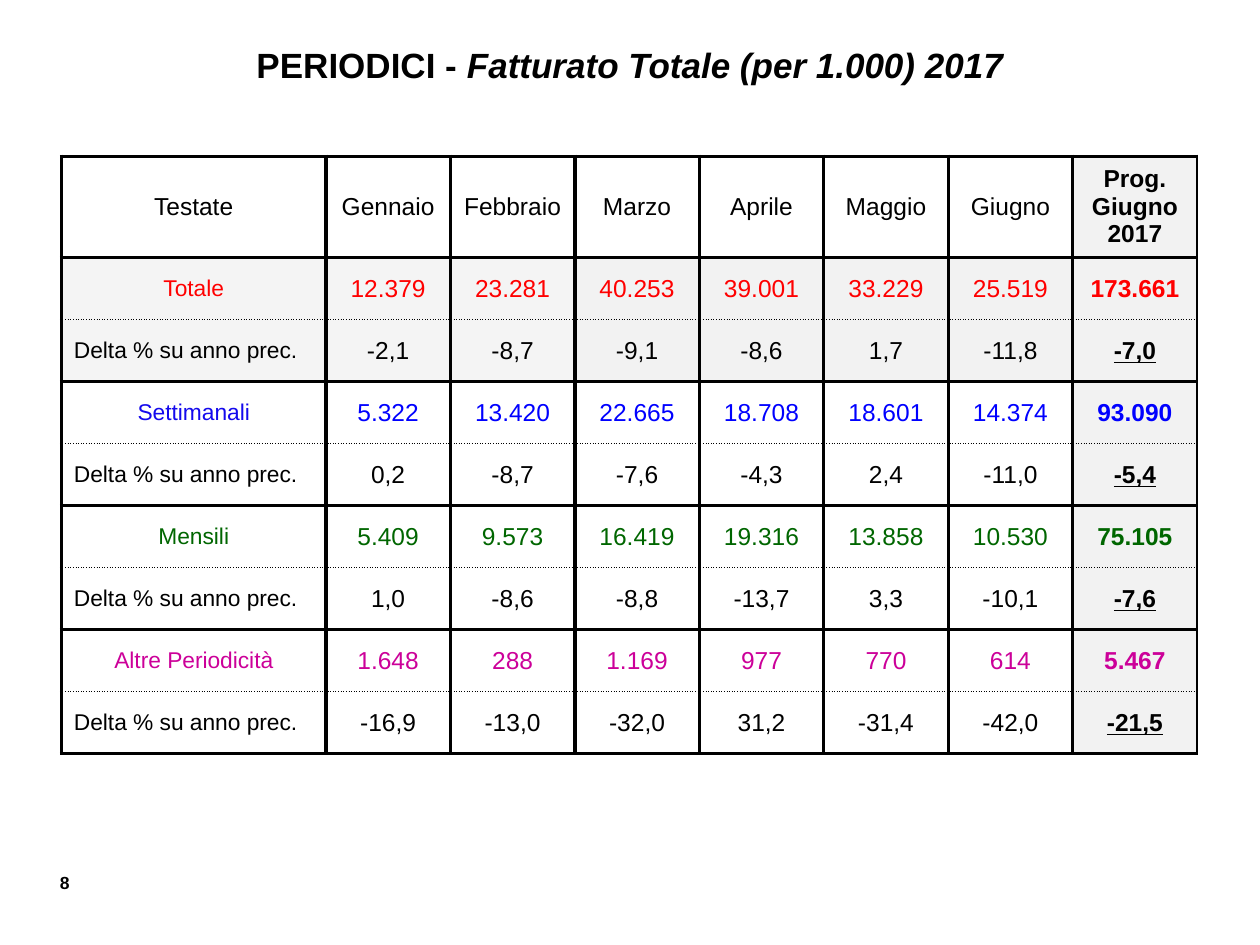
"""Build the slide with the 2017 turnover table of periodicals."""
from dataclasses import dataclass

from lxml.etree import SubElement
from pptx import Presentation
from pptx.dml.color import RGBColor
from pptx.enum.text import MSO_ANCHOR, MSO_AUTO_SIZE, PP_ALIGN
from pptx.oxml.ns import qn
from pptx.util import Cm, Pt

BLACK = RGBColor(0x00, 0x00, 0x00)
GREY = RGBColor(0xF2, 0xF2, 0xF2)
RED = RGBColor(0xFF, 0x00, 0x00)
INDIGO = RGBColor(0x14, 0x09, 0xED)
BLUE = RGBColor(0x00, 0x00, 0xFF)
GREEN = RGBColor(0x00, 0x66, 0x00)
PINK = RGBColor(0xCC, 0x00, 0x99)
FONT = "Arial"
THIN, MID, THICK = 1, 1.5, 2.25
DELTA = "Delta % su anno prec."
HEADS = ["Testate", "Gennaio", "Febbraio", "Marzo", "Aprile", "Maggio",
         "Giugno", "Prog.\vGiugno 2017"]
LAST = len(HEADS) - 1


@dataclass
class Group:
    name: str
    tint: RGBColor
    hue: RGBColor
    sums: str
    rates: str
    top: float
    base: float
    shade: bool = False


GROUPS = [
    Group("Totale", RED, RED,
          "12.379 23.281 40.253 39.001 33.229 25.519 173.661",
          "-2,1 -8,7 -9,1 -8,6 1,7 -11,8 -7,0", THICK, THICK, True),
    Group("Settimanali", INDIGO, BLUE,
          "5.322 13.420 22.665 18.708 18.601 14.374 93.090",
          "0,2 -8,7 -7,6 -4,3 2,4 -11,0 -5,4", THICK, MID),
    Group("Mensili", GREEN, GREEN,
          "5.409 9.573 16.419 19.316 13.858 10.530 75.105",
          "1,0 -8,6 -8,8 -13,7 3,3 -10,1 -7,6", MID, MID),
    Group("Altre Periodicità", PINK, PINK,
          "1.648 288 1.169 977 770 614 5.467",
          "-16,9 -13,0 -32,0 31,2 -31,4 -42,0 -21,5", MID, THICK),
]


def style(run, size: float, color: RGBColor = BLACK, bold: bool = False) -> None:
    run.font.name = FONT
    run.font.size = Pt(size)
    run.font.bold = bold
    run.font.color.rgb = color


def border(cell, side: str, width: float) -> None:
    line = SubElement(cell._tc.get_or_add_tcPr(), qn(f"a:ln{side}"),
                      w=str(Pt(width)), cmpd="sng")
    fill = SubElement(line, qn("a:solidFill"))
    SubElement(fill, qn("a:srgbClr"), val=str(BLACK))
    SubElement(line, qn("a:prstDash"),
               val="sysDot" if width == THIN and side in "TB" else "solid")


def paint(cell, shade: bool, sheer: bool) -> None:
    if not shade:
        cell.fill.background()
        return
    cell.fill.solid()
    cell.fill.fore_color.rgb = GREY
    if sheer:
        color = cell._tc.tcPr.find(qn("a:solidFill")).find(qn("a:srgbClr"))
        SubElement(color, qn("a:alpha"), val="80000")


def inset(cell, left: float, top: float, base: float) -> None:
    cell.margin_left = cell.margin_right = Cm(left)
    cell.margin_top, cell.margin_bottom = Cm(top), Cm(base)


def write(cell, text: str, size: float, color: RGBColor, bold: bool) -> None:
    cell.vertical_anchor = MSO_ANCHOR.MIDDLE
    cell.text_frame.text = text
    para = cell.text_frame.paragraphs[0]
    para.alignment = PP_ALIGN.LEFT if text == DELTA else PP_ALIGN.CENTER
    for run in para.runs:
        style(run, size, color, bold)


def fill_row(table, row: int, texts: list[str], tint: RGBColor, hue: RGBColor,
             top: float, base: float, shade: bool = False) -> None:
    for col, text in enumerate(texts):
        cell = table.cell(row, col)
        label, end = col == 0, col == LAST
        write(cell, text, 13 if label and row else 14, tint if label else hue, end)
        if row and not label:
            inset(cell, 0.03, 0.03, 0)
        else:
            inset(cell, 0.25 if row or col else 0.13, 0.13, 0.13)
        for side, width in zip("LRTB", (THICK, THIN if end else THICK, top, base)):
            border(cell, side, width)
        paint(cell, shade or end, shade and col < 3)


def add_grid(slide) -> None:
    rows = 1 + 2 * len(GROUPS)
    frame = slide.shapes.add_table(rows, len(HEADS), Cm(1.24), Cm(3.15),
                                   Cm(22.9), Cm(12.03))
    table = frame.table
    table.first_row = table.horz_banding = False
    for col, part in enumerate(table.columns):
        part.width = Cm(2.51 if col else 5.33)
    for row, part in enumerate(table.rows):
        part.height = Cm(1.25 if row else 2.03)
    fill_row(table, 0, HEADS, BLACK, BLACK, THICK, THICK)
    for num, group in enumerate(GROUPS):
        row = 1 + 2 * num
        fill_row(table, row, [group.name, *group.sums.split()], group.tint,
                 group.hue, group.top, THIN, group.shade)
        fill_row(table, row + 1, [DELTA, *group.rates.split()], BLACK, BLACK,
                 THIN, group.base, group.shade)
        total = table.cell(row + 1, LAST).text_frame.paragraphs[0]
        total.runs[0].font.underline = True


def add_title(slide) -> None:
    title = slide.shapes.title
    title.left, title.top, title.width, title.height = (
        Cm(0), Cm(0.74), Cm(25.4), Cm(1.12))
    frame = title.text_frame
    frame.auto_size = MSO_AUTO_SIZE.NONE
    frame.vertical_anchor = MSO_ANCHOR.TOP
    para = frame.paragraphs[0]
    para.text = "PERIODICI - "
    para.alignment = PP_ALIGN.CENTER
    para.add_run().text = "Fatturato Totale (per 1.000) 2017"
    for run in para.runs:
        style(run, 20, bold=True)
    para.runs[1].font.italic = True


def add_page(slide) -> None:
    box = slide.shapes.add_textbox(Cm(0.48), Cm(17.45), Cm(1.17), Cm(0.69))
    box.text_frame.word_wrap = True
    para = box.text_frame.paragraphs[0]
    para.text = "8"
    para.alignment = PP_ALIGN.RIGHT
    style(para.runs[0], 10, bold=True)


def main() -> None:
    deck = Presentation()
    deck.slide_width, deck.slide_height = Cm(25.4), Cm(19.05)
    slide = deck.slides.add_slide(deck.slide_layouts[5])
    add_page(slide)
    add_grid(slide)
    add_title(slide)
    deck.save("out.pptx")


if __name__ == "__main__":
    main()
